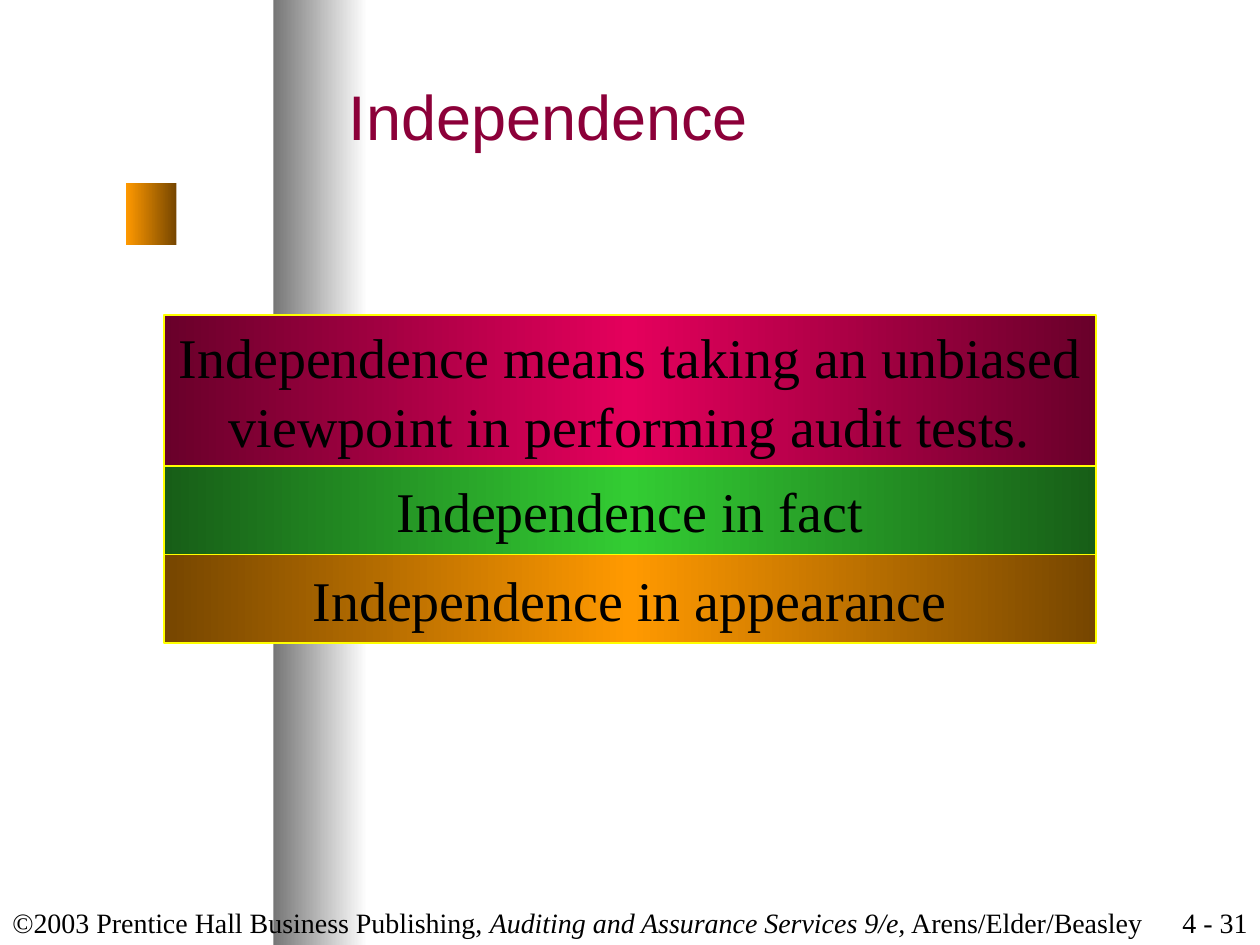
from lxml import etree
from pptx import Presentation
from pptx import util as u
from pptx.dml.color import RGBColor
from pptx.enum import shapes, text
from pptx.oxml.ns import qn

SERIF, SANS = "Times New Roman", "Arial"
BLACK, WHITE, YELLOW, MAROON = "000000", "FFFFFF", "FFFF00", "8C0039"
ORANGE, GREEN, CRIMSON = "FF9900", "33CC33", "E4005C"
SHADE = "46275"

TITLE = [[("Independence", False)]]
FOOTER = [[
    ("©2003 Prentice Hall Business Publishing, ", False),
    ("Auditing and Assurance Services 9/e,", True),
    (" Arens/Elder/Beasley", False),
]]
PAGE_NUMBER = [[("4 - 31", False)]]
BANDS = [  # lines, colour, height in cm
    (["Independence means taking an unbiased",
      "viewpoint in performing audit tests."], CRIMSON, 3.05),
    (["Independence in fact"], GREEN, 1.78),
    (["Independence in appearance"], ORANGE, 1.78),
]
BAND_LEFT, BAND_TOP, BAND_WIDTH = 3.3, 6.35, 18.8


def rgb(value):
    return RGBColor.from_string(value)


def write(shape, paragraphs, size, font=SERIF, color=BLACK, align="LEFT",
          anchor="MIDDLE", wrap=True):
    """Fill a shape with paragraphs, each a list of (words, italic) runs."""
    frame = shape.text_frame
    frame.word_wrap = wrap
    frame.vertical_anchor = getattr(text.MSO_ANCHOR, anchor)
    for index, runs in enumerate(paragraphs):
        paragraph = frame.add_paragraph() if index else frame.paragraphs[0]
        paragraph.alignment = getattr(text.PP_ALIGN, align)
        if index:
            paragraph.space_before = u.Pt(1.5)
        for words, italic in runs:
            run = paragraph.add_run()
            run.text = words
            run.font.name, run.font.size = font, u.Pt(size)
            run.font.italic = italic
            run.font.color.rgb = rgb(color)


def add_gradient_box(slide, box, stops, line=None):
    """Rectangle with a horizontal gradient of (percent, colour, shaded) stops."""
    shape = slide.shapes.add_shape(shapes.MSO_SHAPE.RECTANGLE, *map(u.Cm, box))
    shape.shadow.inherit = False
    shape.fill.gradient()
    shape.fill.gradient_angle = 0
    stop_list = shape._element.spPr.find(qn("a:gradFill")).find(qn("a:gsLst"))
    for old_stop in list(stop_list):
        stop_list.remove(old_stop)
    for percent, color, shaded in stops:
        stop = etree.SubElement(stop_list, qn("a:gs"), pos=str(percent * 1000))
        tone = etree.SubElement(stop, qn("a:srgbClr"), val=color)
        if shaded:
            etree.SubElement(tone, qn("a:gamma"))
            etree.SubElement(tone, qn("a:shade"), val=SHADE)
            etree.SubElement(tone, qn("a:invGamma"))
    if line:
        shape.line.color.rgb = rgb(line)
        shape.line.width = u.Pt(1)
    else:
        shape.line.fill.background()
    return shape


def add_text(slide, box, paragraphs, size, **style):
    write(slide.shapes.add_textbox(*map(u.Cm, box)), paragraphs, size, **style)


def main():
    presentation = Presentation()
    presentation.slide_width, presentation.slide_height = u.Cm(25.4), u.Cm(19.05)
    slide = presentation.slides.add_slide(presentation.slide_layouts[6])

    add_gradient_box(slide, (5.51, 0, 1.9, 19.05),
                     [(0, WHITE, True), (100, WHITE, False)])
    add_gradient_box(slide, (2.54, 3.68, 1.02, 1.27),
                     [(0, ORANGE, False), (100, ORANGE, True)])
    add_text(slide, (0, 17.78, 23.37, 1.27), FOOTER, 16,
             anchor="BOTTOM", wrap=False)
    add_text(slide, (22.86, 17.78, 2.54, 1.27), PAGE_NUMBER, 16,
             align="RIGHT", anchor="BOTTOM")
    add_text(slide, (6.78, 0.64, 17.78, 3.38), TITLE, 36, font=SANS, color=MAROON)

    top = BAND_TOP
    for lines, color, height in BANDS:
        band = add_gradient_box(
            slide, (BAND_LEFT, top, BAND_WIDTH, height),
            [(0, color, True), (50, color, False), (100, color, True)], line=YELLOW)
        write(band, [[(line, False)] for line in lines], 32,
              align="CENTER", wrap=False)
        top += height

    presentation.save("out.pptx")


if __name__ == "__main__":
    main()
